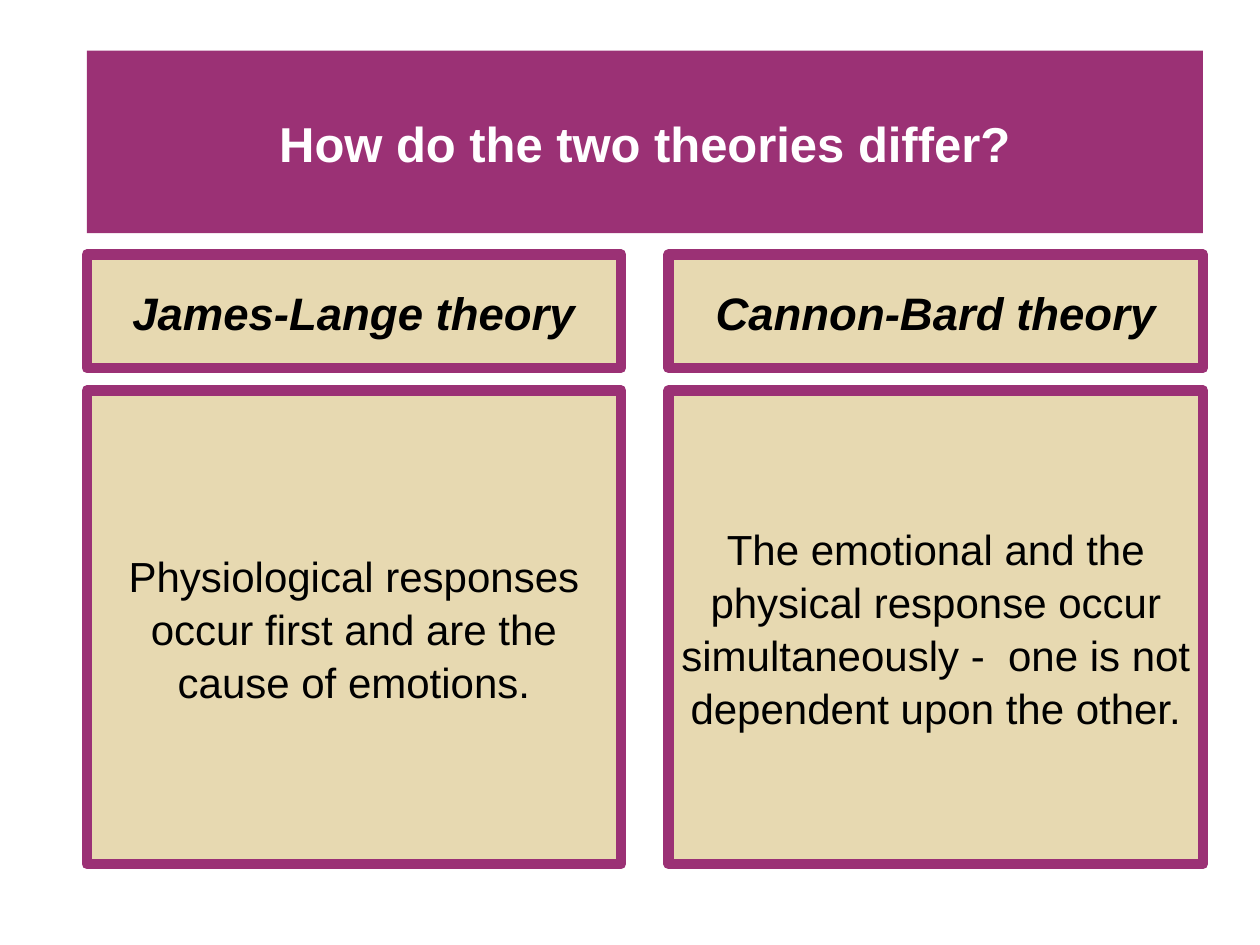
from pptx import Presentation
from pptx.dml.color import RGBColor
from pptx.enum.shapes import MSO_SHAPE
from pptx.enum.text import MSO_ANCHOR, PP_ALIGN
from pptx.util import Cm, Pt

RECTANGLE = MSO_SHAPE.RECTANGLE
MIDDLE = MSO_ANCHOR.MIDDLE
CENTER = PP_ALIGN.CENTER

TITLE = "How do the two theories differ?"
THEORIES = [
    ("James-Lange theory",
     "Physiological responses occur first and are the cause of emotions."),
    ("Cannon-Bard theory",
     "The emotional and the physical response occur simultaneously -  "
     "one is not dependent upon the other."),
]

THEME = {
    "font": "Arial",
    "plum": RGBColor(0x9B, 0x31, 0x75),
    "sand": RGBColor(0xE7, 0xD9, 0xB1),
    "white": RGBColor(0xFF, 0xFF, 0xFF),
    "black": RGBColor(0x00, 0x00, 0x00),
    "title_size": Pt(28),
    "heading_size": Pt(26),
    "body_size": Pt(24),
    "border": Pt(6),
    "line_spacing": 1.05,
}

LEFT, WIDTH, GUTTER = 1.75, 22.5, 0.96
TITLE_TOP, TITLE_HEIGHT = 1.02, 3.68
HEADING_TOP, HEADING_HEIGHT = 5.13, 2.29
BODY_TOP, BODY_HEIGHT = 7.87, 9.55


def add_box(slide, text, box, fill, color, size,
            bordered=True, bold=False, italic=False):
    shape = slide.shapes.add_shape(RECTANGLE, *map(Cm, box))
    shape.shadow.inherit = False
    shape.fill.solid()
    shape.fill.fore_color.rgb = fill
    if bordered:
        shape.line.color.rgb = THEME["plum"]
        shape.line.width = THEME["border"]
    else:
        shape.line.fill.background()

    text_frame = shape.text_frame
    text_frame.word_wrap = True
    text_frame.vertical_anchor = MIDDLE
    text_frame.text = text
    paragraph = text_frame.paragraphs[0]
    paragraph.alignment = CENTER
    paragraph.line_spacing = THEME["line_spacing"]
    font = paragraph.runs[0].font
    font.name = THEME["font"]
    font.size = size
    font.bold = bold
    font.italic = italic
    font.color.rgb = color


def main():
    presentation = Presentation()
    presentation.slide_width = Cm(25.4)
    presentation.slide_height = Cm(19.05)
    slide = presentation.slides.add_slide(presentation.slide_layouts[6])

    add_box(slide, TITLE, (LEFT, TITLE_TOP, WIDTH, TITLE_HEIGHT),
            THEME["plum"], THEME["white"], THEME["title_size"],
            bordered=False, bold=True)

    column_width = (WIDTH - GUTTER) / len(THEORIES)
    for index, (heading, body) in enumerate(THEORIES):
        left = LEFT + index * (column_width + GUTTER)
        add_box(slide, heading, (left, HEADING_TOP, column_width, HEADING_HEIGHT),
                THEME["sand"], THEME["black"], THEME["heading_size"],
                bold=True, italic=True)
        add_box(slide, body, (left, BODY_TOP, column_width, BODY_HEIGHT),
                THEME["sand"], THEME["black"], THEME["body_size"])

    presentation.save("out.pptx")


if __name__ == "__main__":
    main()
